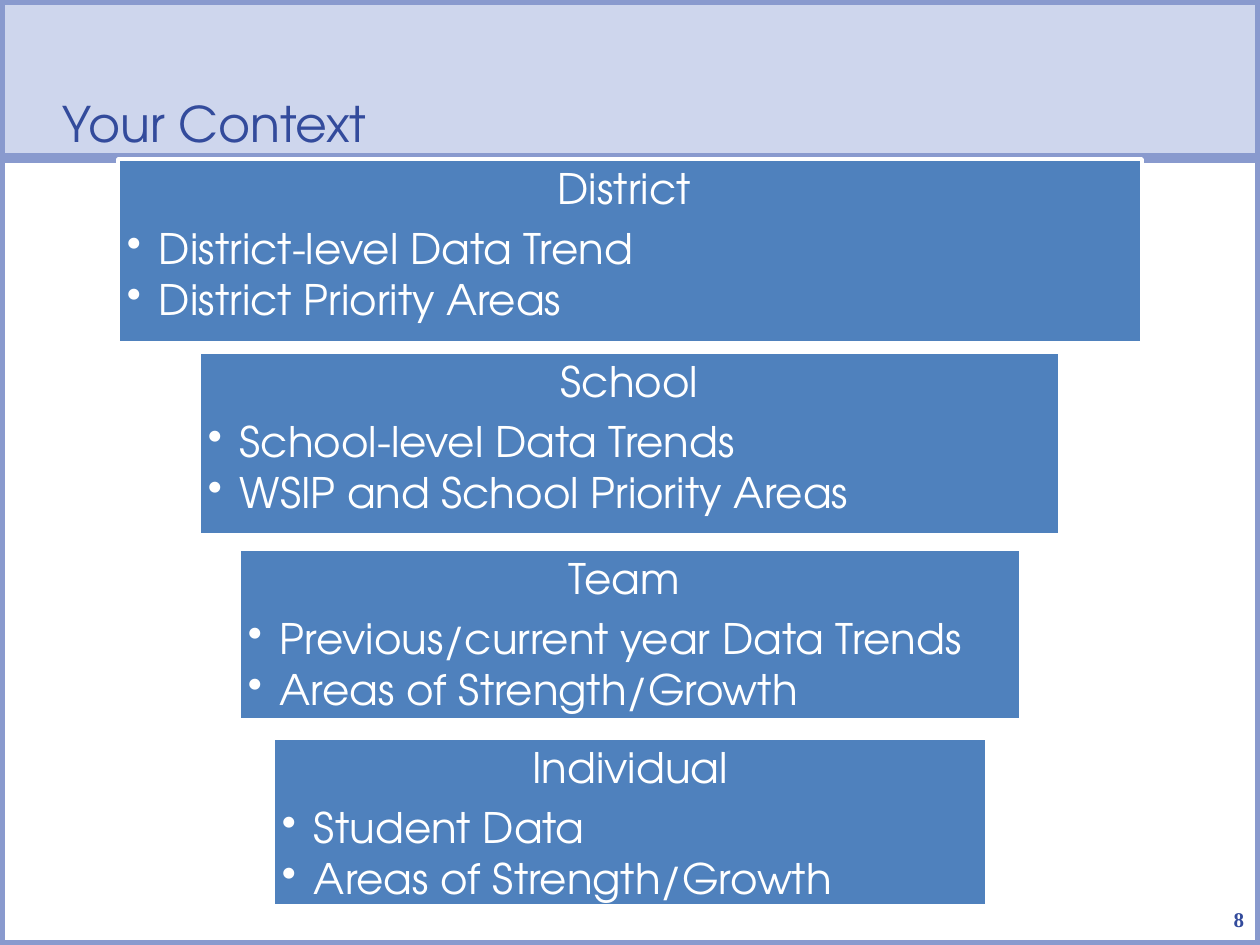
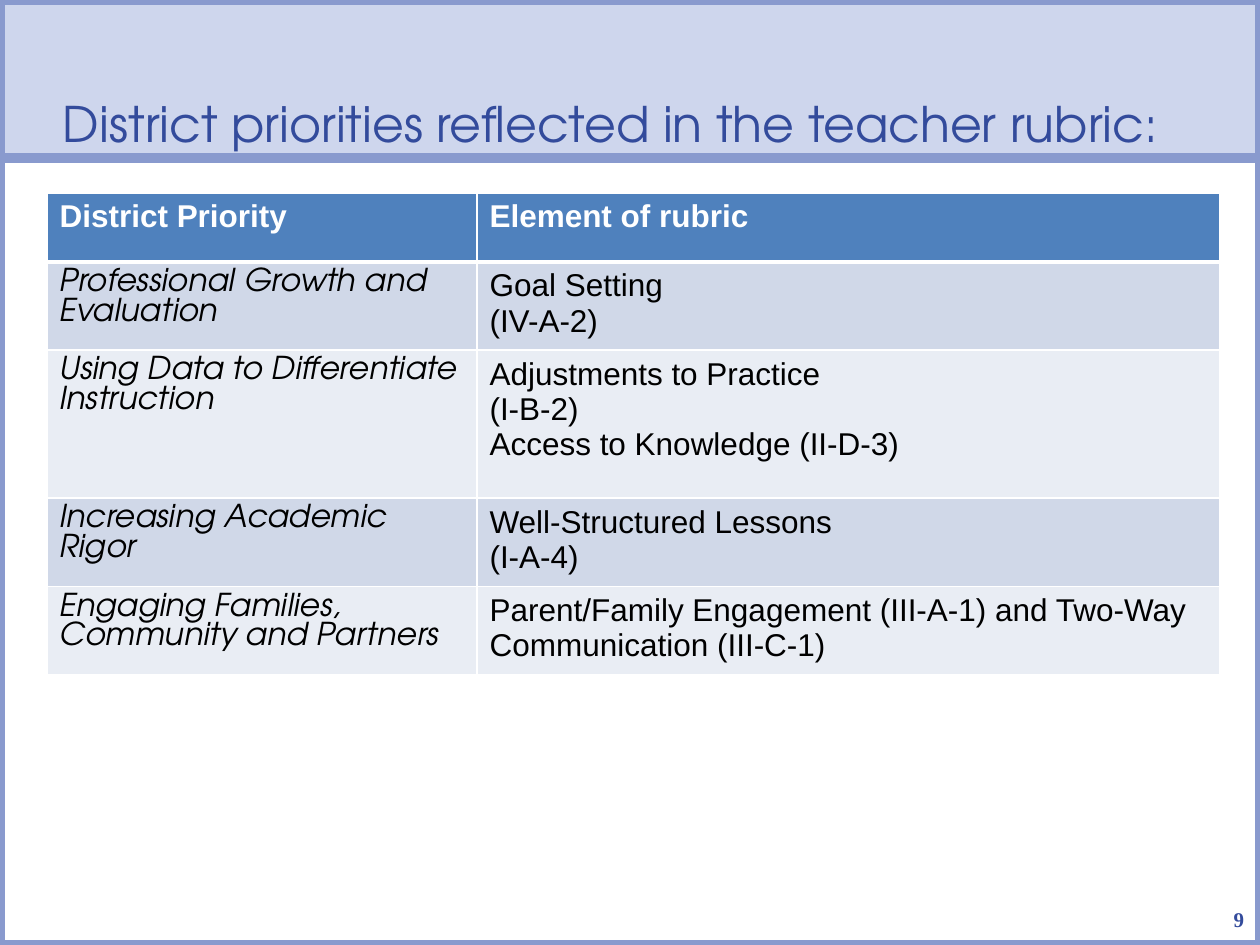
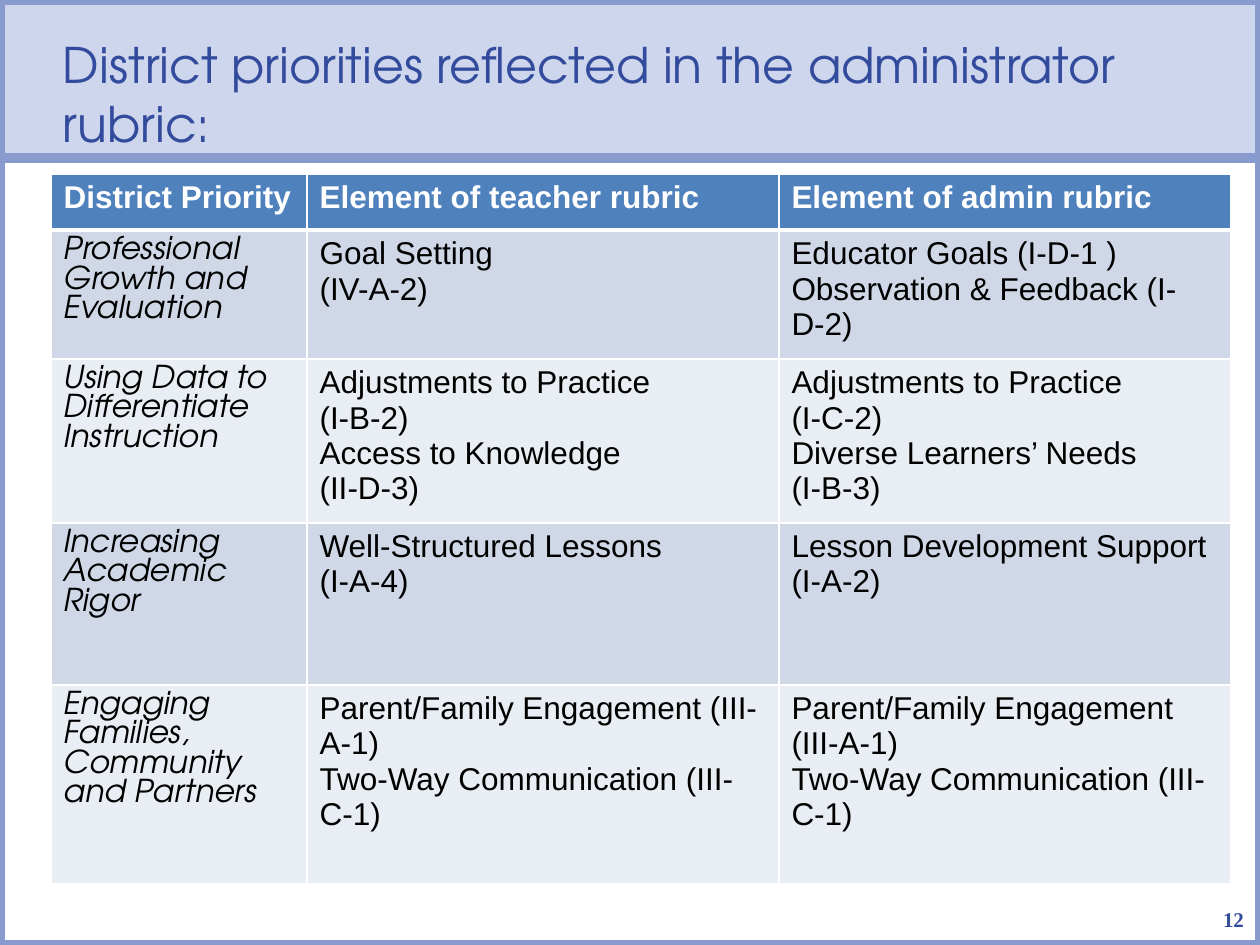
from lxml.etree import SubElement
from pptx import Presentation
from pptx.dml.color import RGBColor
from pptx.enum.shapes import MSO_SHAPE
from pptx.enum.text import MSO_ANCHOR, PP_ALIGN
from pptx.oxml.ns import qn
from pptx.util import Emu, Pt

PX_PER_INCH = 126
WIDTH, HEIGHT, BAND = 1260, 945, 158

WHITE = RGBColor(0xFF, 0xFF, 0xFF)
BLACK = RGBColor(0x00, 0x00, 0x00)
NAVY = RGBColor(0x33, 0x4B, 0x9C)
FRAME = RGBColor(0x89, 0x9A, 0xCE)
PALE = RGBColor(0xCE, 0xD6, 0xED)
BLUE = RGBColor(0x4F, 0x81, 0xBD)
ROW_FILLS = (RGBColor(0xD0, 0xD8, 0xE8), RGBColor(0xE9, 0xED, 0xF4))

DISPLAY, BODY, NUMBER = "TeX Gyre Adventor", "Arial", "Times New Roman"

LEVELS = [
    ((118, 159, 1024, 184), "District ",
     ["District-level Data Trend", "District Priority Areas"]),
    ((199, 352, 861, 183), "School",
     ["School-level Data Trends", "WSIP and School Priority Areas"]),
    ((239, 549, 782, 171), "Team ",
     ["Previous/current year Data Trends", "Areas of Strength/Growth"]),
    ((273, 738, 714, 168), "Individual",
     ["Student Data", "Areas of Strength/Growth"]),
]

PRIORITIES = [
    "Professional Growth and Evaluation",
    "Using Data to Differentiate Instruction",
    "Increasing Academic Rigor",
    "Engaging Families, Community and Partners",
]
TEACHER = [
    ["Goal Setting", "(IV-A-2)"],
    ["Adjustments to Practice", "(I-B-2)", "Access to Knowledge (II-D-3)"],
    ["Well-Structured Lessons", "(I-A-4)"],
    ["Parent/Family Engagement (III-A-1) and Two-Way Communication (III-C-1)"],
]
ENGAGEMENT = ["Parent/Family Engagement (III-A-1)", "Two-Way Communication (III-C-1)"]
TEACHER_SPLIT = [
    TEACHER[0],
    ["Adjustments to Practice", "(I-B-2)", "Access to Knowledge", "(II-D-3)"],
    TEACHER[2],
    ENGAGEMENT,
]
ADMIN = [
    ["Educator Goals (I-D-1 )", "Observation & Feedback (I-D-2)"],
    ["Adjustments to Practice", "(I-C-2)", "Diverse Learners’ Needs", "(I-B-3)"],
    ["Lesson Development Support", "(I-A-2)"],
    ENGAGEMENT,
]


def px(n):
    return Emu(round(n * 914400 / PX_PER_INCH))


class Deck:
    def __init__(self):
        self.prs = Presentation()
        self.prs.slide_width, self.prs.slide_height = px(WIDTH), px(HEIGHT)
        self.s = None

    def slide(self, title, number):
        """Start a slide with its frame, title band and page number."""
        self.s = self.prs.slides.add_slide(self.prs.slide_layouts[6])
        self.rect((0, BAND, WIDTH, HEIGHT - BAND), None, FRAME, 6)
        band = self.rect((0, 0, WIDTH, BAND), PALE, FRAME, 6)
        tf = self.frame(band, (0, 0, 63, 6), MSO_ANCHOR.BOTTOM)
        p = self.paragraph(tf, title, 28, DISPLAY, NAVY)
        self.indent(p, 63, 0)
        box = self.s.shapes.add_textbox(px(1210), px(882), px(34), px(50))
        tf = self.frame(box, (0, 0, 0, 0), MSO_ANCHOR.BOTTOM)
        self.paragraph(tf, str(number), 12, NUMBER, NAVY, bold=True, align=PP_ALIGN.RIGHT)

    def rect(self, at, fill, line, weight):
        sp = self.s.shapes.add_shape(MSO_SHAPE.RECTANGLE, *map(px, at))
        sp.shadow.inherit = False
        if fill is None:
            sp.fill.background()
        else:
            sp.fill.solid()
            sp.fill.fore_color.rgb = fill
        sp.line.color.rgb = line
        sp.line.width = Pt(weight)
        return sp

    def frame(self, sp, insets, anchor):
        tf = sp.text_frame
        tf.word_wrap = True
        tf.vertical_anchor = anchor
        tf.margin_left, tf.margin_top, tf.margin_right, tf.margin_bottom = map(px, insets)
        return tf

    def paragraph(self, tf, text, size, font, color, bold=False, italic=False,
                  align=PP_ALIGN.LEFT):
        """Fill the empty first paragraph, or add one after the last."""
        p = tf.paragraphs[-1]
        if p.runs:
            p = tf.add_paragraph()
        p.alignment = align
        r = p.add_run()
        r.text = text
        r.font.size, r.font.name = Pt(size), font
        r.font.bold, r.font.italic = bold, italic
        r.font.color.rgb = color
        return p

    def indent(self, p, left, first):
        pPr = p._p.get_or_add_pPr()
        pPr.set("marL", str(px(left)))
        pPr.set("indent", str(px(first)))
        return pPr

    def level(self, at, heading, points):
        """Draw a box with a centred heading over bullet points."""
        tf = self.frame(self.rect(at, BLUE, WHITE, 2), (9, 9, 9, 9), MSO_ANCHOR.TOP)
        p = self.paragraph(tf, heading, 24, DISPLAY, WHITE, align=PP_ALIGN.CENTER)
        p.line_spacing, p.space_after = 0.9, Pt(8.4)
        for point in points:
            p = self.paragraph(tf, point, 24, DISPLAY, WHITE)
            p.line_spacing, p.space_after = 0.9, Pt(3.6)
            SubElement(self.indent(p, 32, -32), qn("a:buChar"), char="•")

    def cell(self, cell, lines, fill, bottom, **style):
        tcPr = cell._tc.get_or_add_tcPr()
        for side, weight in (("L", 1), ("R", 1), ("T", 1), ("B", bottom)):
            ln = SubElement(tcPr, qn(f"a:ln{side}"), w=str(Pt(weight)))
            SubElement(SubElement(ln, qn("a:solidFill")), qn("a:srgbClr"), val=str(WHITE))
        cell.fill.solid()
        cell.fill.fore_color.rgb = fill
        for line in lines:
            self.paragraph(cell.text_frame, line, 18, **style)

    def table(self, left, top, widths, heights, headings, columns):
        """Draw the priorities with one column of rubric elements per list."""
        shape = self.s.shapes.add_table(len(heights), len(widths), px(left), px(top),
                                        px(sum(widths)), px(sum(heights)))
        table = shape.table
        for col, width in zip(table.columns, widths):
            col.width = px(width)
        for row, height in zip(table.rows, heights):
            row.height = px(height)
        for c, heading in enumerate(headings):
            self.cell(table.cell(0, c), [heading], BLUE, 3, font=BODY, color=WHITE, bold=True)
        for i, (priority, *elements) in enumerate(zip(PRIORITIES, *columns)):
            fill = ROW_FILLS[i % 2]
            self.cell(table.cell(i + 1, 0), [priority], fill, 1,
                      font=DISPLAY, color=BLACK, italic=True)
            for c, lines in enumerate(elements, 1):
                self.cell(table.cell(i + 1, c), lines, fill, 1, font=BODY, color=BLACK)


def main():
    deck = Deck()
    deck.slide("Your Context", 8)
    for level in LEVELS:
        deck.level(*level)

    deck.slide("District priorities reflected in the teacher rubric:", 9)
    deck.table(47, 193, (430, 743), (69, 88, 148, 88, 88),
               ("District Priority", "Element of rubric"), (TEACHER,))

    deck.slide("District priorities reflected in the administrator rubric:", 12)
    deck.table(51, 174, (256, 472, 452), (56, 129, 154, 162, 199),
               ("District Priority", "Element of teacher rubric", "Element of admin rubric"),
               (TEACHER_SPLIT, ADMIN))
    deck.prs.save("out.pptx")


if __name__ == "__main__":
    main()
